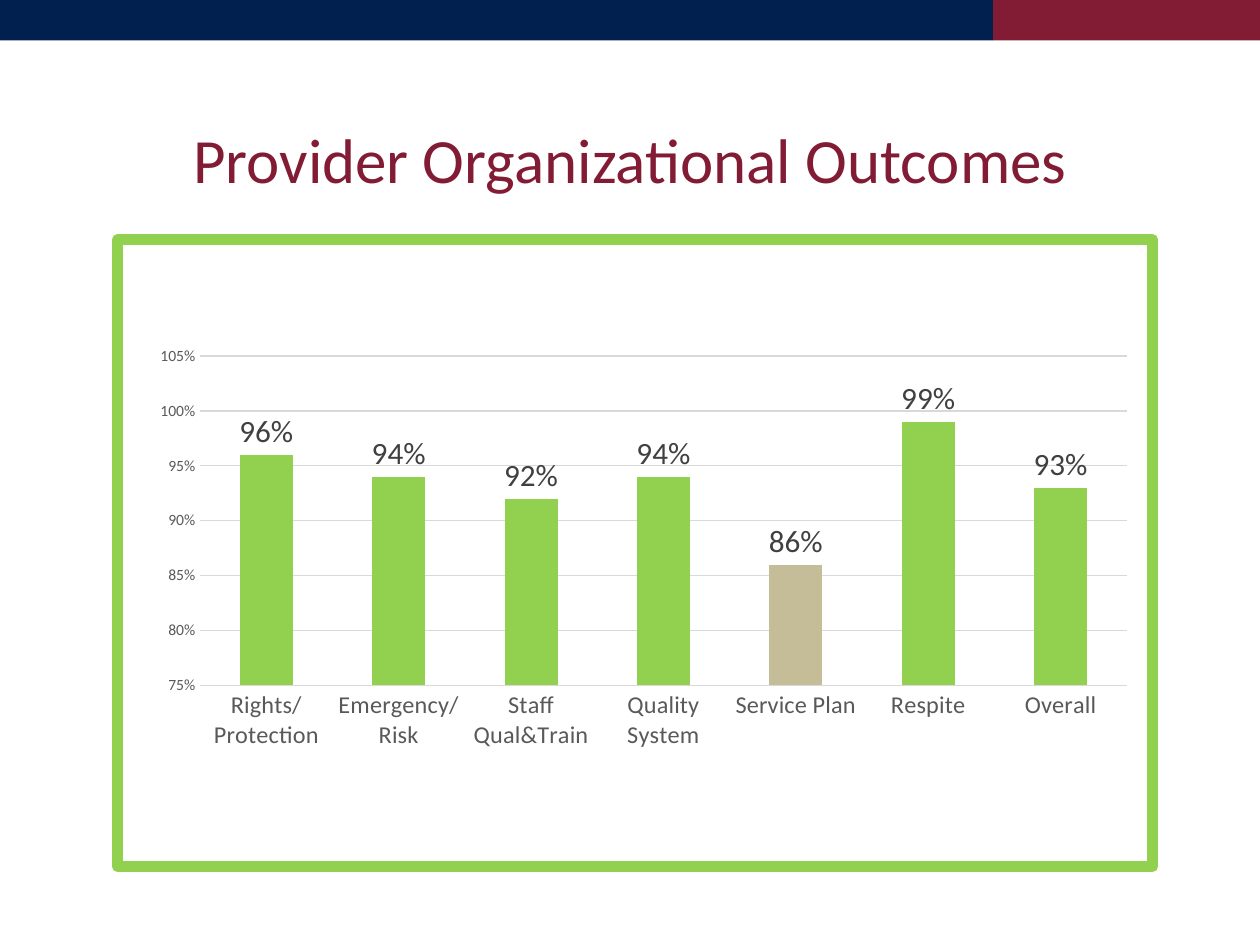
"""Build the provider organizational outcomes slide with its column chart."""
from lxml import etree
from pptx import Presentation, util as u
from pptx.chart.data import CategoryChartData
from pptx.dml.color import RGBColor
from pptx.enum import chart as ch, shapes, text

THEME = {
    "font": "Calibri", "navy": "011F4F", "maroon": "821C35", "green": "92D050",
    "tan": "C4BD97", "grid": "D9D9D9", "axis": "595959", "label": "404040",
    "title_size": 36, "value_size": 18, "category_size": 14, "tick_size": 9,
}
OUTCOMES = {
    "Rights/Protection": 0.96, "Emergency/Risk": 0.94, "Staff Qual&Train": 0.92,
    "Quality System": 0.94, "Service Plan": 0.86, "Respite": 0.99, "Overall": 0.93,
}
NS = ('xmlns:c="http://schemas.openxmlformats.org/drawingml/2006/chart" '
      'xmlns:a="http://schemas.openxmlformats.org/drawingml/2006/main"')


def color(name):
    return RGBColor.from_string(THEME[name])


def set_font(font, size, name):
    font.name, font.size = THEME["font"], u.Pt(THEME[size])
    font.color.rgb = color(name)


prs = Presentation()
prs.slide_width, prs.slide_height = u.Inches(10), u.Inches(7.5)
W, H = prs.slide_width, prs.slide_height
s = prs.slides.add_slide(prs.slide_layouts[5])

split = u.Inches(7.88)
for left, width, name in [(split, W - split, "maroon"), (0, split, "navy")]:
    sp = s.shapes.add_shape(shapes.MSO_SHAPE.RECTANGLE, left, 0, width, u.Inches(0.32))
    sp.shadow.inherit = False
    sp.fill.solid()
    sp.fill.fore_color.rgb = color(name)
    sp.line.fill.background()

title = s.shapes.title
title.left, title.top = int(W * 0.1), u.Inches(0.83)
title.width, title.height = int(W * 0.8), u.Inches(0.73)
tf = title.text_frame
tf.margin_left = tf.margin_right = tf.margin_top = tf.margin_bottom = 0
tf.vertical_anchor = text.MSO_ANCHOR.BOTTOM
tf.text = "Provider Organizational Outcomes"
p = tf.paragraphs[0]
p.alignment = text.PP_ALIGN.CENTER
p.line_spacing = u.Pt(49)
set_font(p.font, "title_size", "maroon")

data = CategoryChartData(number_format="0%")
data.categories = list(OUTCOMES)
data.add_series("Series 1", list(OUTCOMES.values()))
chart = s.shapes.add_chart(
    ch.XL_CHART_TYPE.COLUMN_CLUSTERED, u.Inches(0.89), u.Inches(1.86),
    u.Inches(8.3), u.Inches(5.06), data).chart
chart.has_legend = chart.has_title = False
chart.font.name, chart.font.size = THEME["font"], u.Pt(10)

for axis, size in [(chart.category_axis, "category_size"), (chart.value_axis, "tick_size")]:
    axis.major_tick_mark = axis.minor_tick_mark = ch.XL_TICK_MARK.NONE
    axis.format.line.fill.background()
    set_font(axis.tick_labels.font, size, "axis")
axis = chart.value_axis
axis.minimum_scale, axis.maximum_scale, axis.major_unit = 0.75, 1.05, 0.05
axis.tick_labels.number_format = "0%"
axis.tick_labels.number_format_is_linked = False
axis.has_major_gridlines = True
axis.major_gridlines.format.line.color.rgb = color("grid")
axis.major_gridlines.format.line.width = u.Pt(0.75)

plot = chart.plots[0]
plot.gap_width = 150
plot.vary_by_categories = False
series = plot.series[0]
for i, value in enumerate(OUTCOMES.values()):
    fill = series.points[i].format.fill
    fill.solid()
    fill.fore_color.rgb = color("green" if value > 0.9 else "tan")
labels = series.data_labels
labels.show_value = True
labels.number_format, labels.number_format_is_linked = "0%", False
labels.position = ch.XL_LABEL_POSITION.OUTSIDE_END
set_font(labels.font, "value_size", "label")

area = chart.element.chart.plotArea
for old in area.findall("{*}layout"):
    area.remove(old)
share = {"x": 0.08, "y": 0.186, "w": 0.895, "h": 0.525}
area.insert(0, etree.fromstring(
    f'<c:layout {NS}><c:manualLayout><c:layoutTarget val="inner"/>'
    '<c:xMode val="edge"/><c:yMode val="edge"/>'
    + "".join(f'<c:{k} val="{v}"/>' for k, v in share.items())
    + "</c:manualLayout></c:layout>"))
chart.element.chart.addnext(etree.fromstring(
    f'<c:spPr {NS}><a:solidFill><a:srgbClr val="FFFFFF"/></a:solidFill>'
    f'<a:ln w="{u.Pt(6)}"><a:solidFill><a:srgbClr val="{THEME["green"]}"/></a:solidFill>'
    "<a:round/></a:ln></c:spPr>"))

prs.save("out.pptx")
